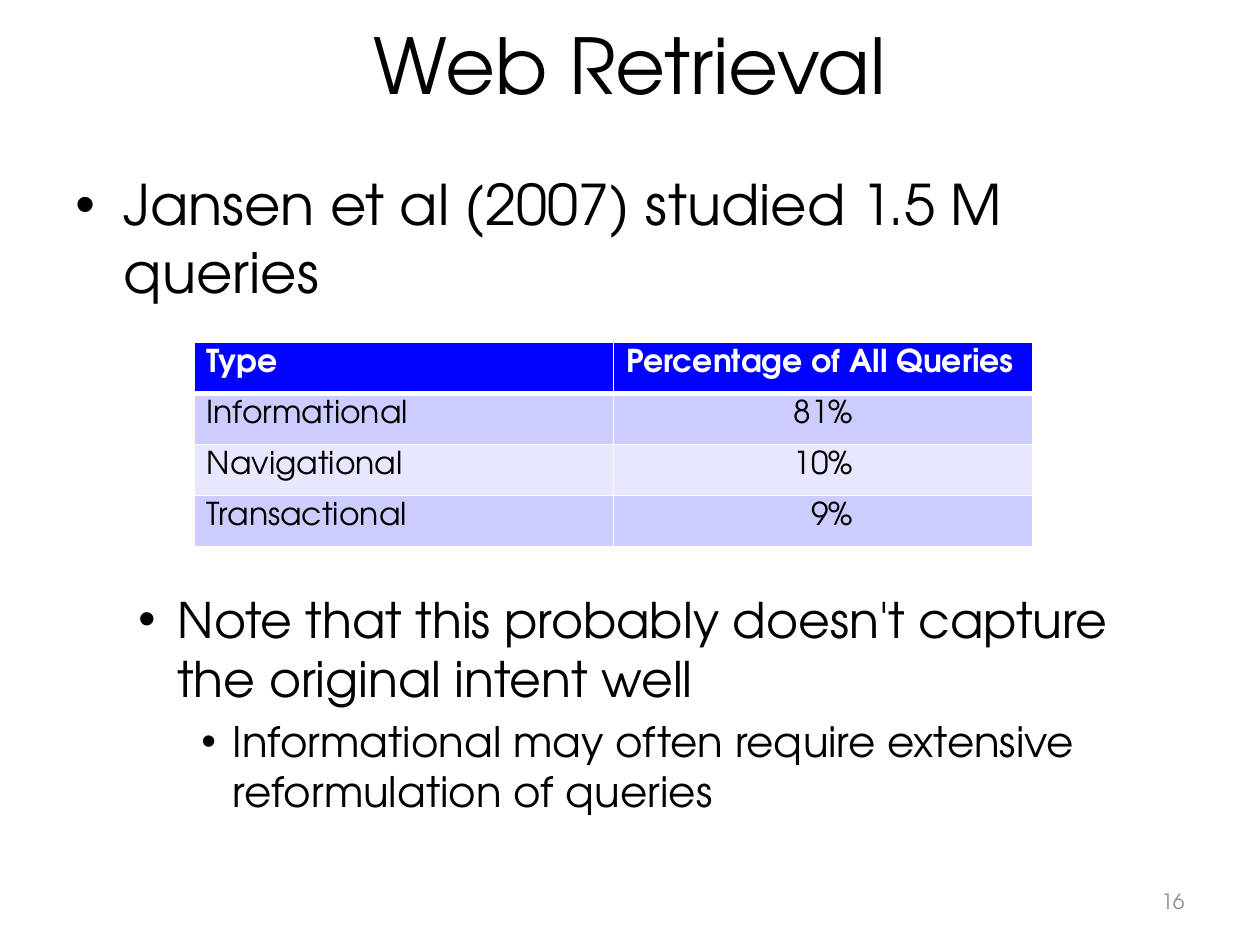
from lxml import etree
from pptx import Presentation
from pptx.dml import color
from pptx.enum import text
from pptx.oxml import ns
from pptx.util import Inches, Pt

FONT = "TeX Gyre Adventor"
ALIGN = text.PP_ALIGN
ANCHOR = text.MSO_ANCHOR


def rgb(value):
    return color.RGBColor.from_string(value)


def write(paragraph, words, size, fill="000000", align=ALIGN.LEFT, bold=False):
    paragraph.alignment = align
    run = paragraph.add_run()
    run.text = words
    formats = {"name": FONT, "size": Pt(size), "bold": bold}
    for name, value in formats.items():
        setattr(run.font, name, value)
    run.font.color.rgb = rgb(fill)


presentation = Presentation()
presentation.slide_width = Inches(10)
presentation.slide_height = Inches(7.5)
slide = presentation.slides.add_slide(presentation.slide_layouts[6])

labels = [
    ("Web Retrieval", (0.5, 0, 9, 1.01), 44, "000000", ALIGN.CENTER),
    ("16", (7.17, 6.95, 2.33, 0.4), 12, "8C8C8C", ALIGN.RIGHT),
]
for words, place, size, fill, align in labels:
    frame = slide.shapes.add_textbox(*map(Inches, place)).text_frame
    frame.word_wrap = True
    frame.vertical_anchor = ANCHOR.MIDDLE
    write(frame.paragraphs[0], words, size, fill, align)

bullet_blocks = [
    ((0.5, 1.3, 9, 1.3), [
        ("Jansen et al (2007) studied 1.5 M queries", 0, 32, 0.38, 0.38),
    ]),
    ((0.5, 4.63, 9, 2.1), [
        ("Note that this probably doesn't capture the original intent well", 1, 28, 0.81, 0.31),
        ("Informational may often require extensive reformulation of queries", 2, 24, 1.25, 0.25),
    ]),
]
for place, items in bullet_blocks:
    frame = slide.shapes.add_textbox(*map(Inches, place)).text_frame
    frame.word_wrap = True
    for index, (words, level, size, indent, hanging) in enumerate(items):
        paragraph = frame.add_paragraph() if index else frame.paragraphs[0]
        write(paragraph, words, size)
        paragraph.level = level
        if index:
            paragraph.space_before = Pt(size * 0.2)
        properties = paragraph._p.get_or_add_pPr()
        properties.set("marL", str(Inches(indent)))
        properties.set("indent", str(-Inches(hanging)))
        etree.SubElement(properties, ns.qn("a:buFont")).set("typeface", "Arial")
        etree.SubElement(properties, ns.qn("a:buChar")).set("char", "•")

rows = [
    ("Type", "Percentage of All Queries"),
    ("Informational", "81%"),
    ("Navigational", "10%"),
    ("Transactional", "9%"),
]
row_fills = ["0001FF", "CCCCFF", "E7E7FF", "CCCCFF"]
place = (1.54, 2.72, 6.66, 1.62)
table = slide.shapes.add_table(len(rows), 2, *map(Inches, place)).table
for row_index, (values, fill) in enumerate(zip(rows, row_fills)):
    header = row_index == 0
    widths = {
        "a:lnL": 1,
        "a:lnR": 1,
        "a:lnT": 3 if row_index == 1 else 1,
        "a:lnB": 3 if header else 1,
    }
    for column_index, words in enumerate(values):
        cell = table.cell(row_index, column_index)
        properties = cell._tc.get_or_add_tcPr()
        for tag, width in widths.items():
            border = etree.SubElement(properties, ns.qn(tag), w=str(Pt(width)))
            solid = etree.SubElement(border, ns.qn("a:solidFill"))
            etree.SubElement(solid, ns.qn("a:srgbClr"), val="FFFFFF")
        cell.fill.solid()
        cell.fill.fore_color.rgb = rgb(fill)
        centred = column_index == 1 and not header
        write(
            cell.text_frame.paragraphs[0], words, 18,
            "FFFFFF" if header else "000000",
            ALIGN.CENTER if centred else ALIGN.LEFT, header,
        )
table.cell(3, 1).margin_left = Inches(0.24)

presentation.save("out.pptx")
